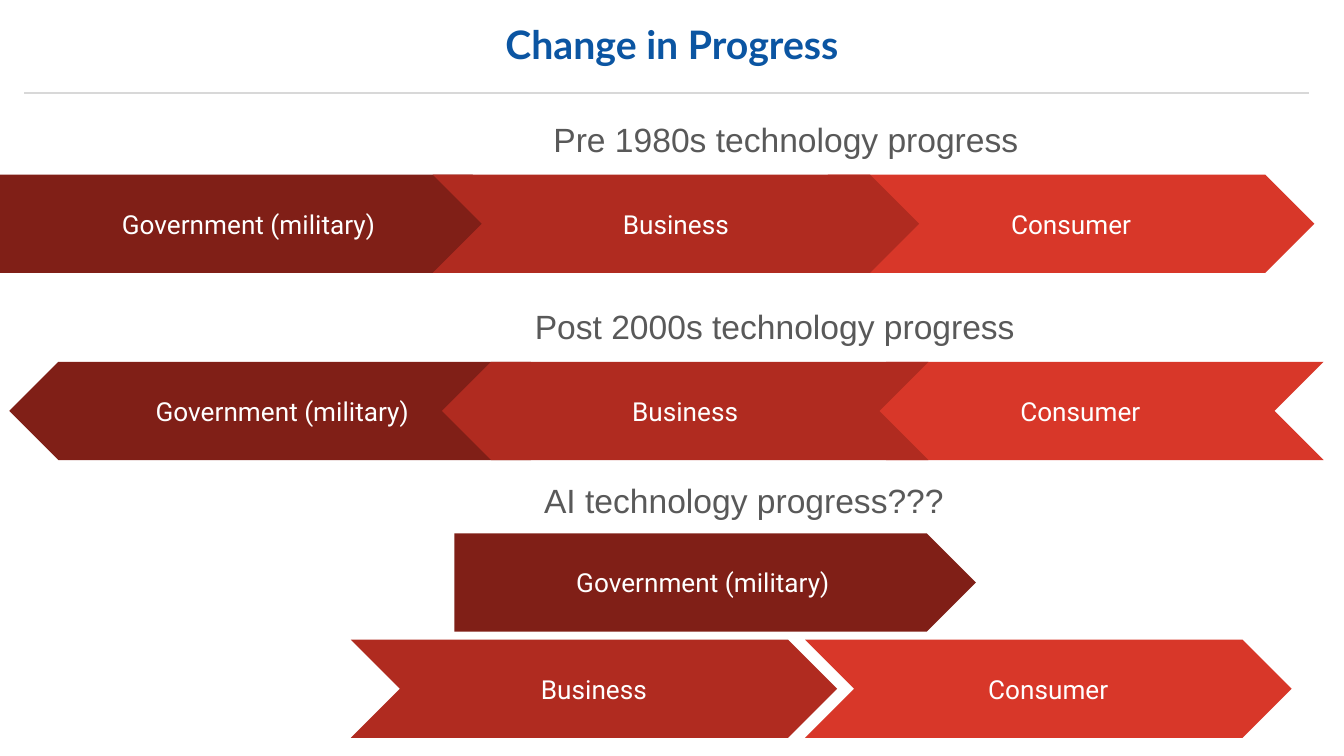
from dataclasses import dataclass

from lxml.etree import SubElement
from pptx import Presentation
from pptx.dml.color import RGBColor
from pptx.enum.shapes import MSO_CONNECTOR as Connector, MSO_SHAPE as Shape
from pptx.enum.text import MSO_ANCHOR as Anchor, PP_ALIGN as Align
from pptx.oxml.ns import qn
from pptx.util import Pt


@dataclass(frozen=True)
class Theme:
    title: str = "0B55A2"
    rule: str = "D8D8D8"
    heading: str = "595959"
    label: str = "FFFFFF"
    government: str = "801F17"
    business: str = "B02B20"
    consumer: str = "D83729"
    title_size: int = 21
    heading_size: int = 18
    label_size: int = 14


THEME = Theme()
ARROW_HEIGHT = 52.6
PLATE_WIDTH = 279.4
CHEVRON_WIDTH = 260.6
ARROWS = {
    "Consumer": (Shape.CHEVRON, CHEVRON_WIDTH, THEME.consumer),
    "Government (military)": (Shape.PENTAGON, PLATE_WIDTH, THEME.government),
    "Business": (Shape.CHEVRON, CHEVRON_WIDTH, THEME.business),
}


def color(value):
    return RGBColor.from_string(value)


def write(shape, text, *, font, size, fill, bold=False, align=Align.LEFT,
          anchor=Anchor.TOP, inset_x=7.2, inset_y=7.2):
    frame = shape.text_frame
    frame.word_wrap = True
    frame.vertical_anchor = anchor
    frame.margin_left = frame.margin_right = Pt(inset_x)
    frame.margin_top = frame.margin_bottom = Pt(inset_y)
    para = frame.paragraphs[0]
    para.alignment = align
    span = para.add_run()
    span.text = text
    span.font.name = font
    span.font.size = Pt(size)
    span.font.bold = bold
    span.font.color.rgb = color(fill)


def add_title(page, left, top, width):
    box = page.shapes.add_textbox(Pt(left), Pt(top), Pt(width), Pt(31))
    write(box, "Change in Progress", font="Lato", size=THEME.title_size,
          fill=THEME.title, bold=True, align=Align.CENTER,
          inset_x=5, inset_y=2.9)
    rule_top = Pt(top + 41.8)
    rule = page.shapes.add_connector(
        Connector.STRAIGHT, Pt(left + 13), rule_top,
        Pt(left + width - 18.7), rule_top)
    rule.line.color.rgb = color(THEME.rule)
    rule.line.width = Pt(1)
    SubElement(rule._element.spPr, qn("a:effectLst"))


def add_heading(page, text, left, top):
    box = page.shapes.add_textbox(Pt(left), Pt(top), Pt(336), Pt(31))
    write(box, text, font="Arial", size=THEME.heading_size, fill=THEME.heading)


def add_arrow(page, label, left, top, reverse):
    kind, width, fill = ARROWS[label]
    arrow = page.shapes.add_shape(
        kind, Pt(left), Pt(top), Pt(width), Pt(ARROW_HEIGHT))
    arrow.adjustments[0] = 0.5
    arrow.shadow.inherit = False
    arrow.fill.solid()
    arrow.fill.fore_color.rgb = color(fill)
    arrow.line.fill.background()
    if reverse:
        arrow._element.spPr.find(qn("a:xfrm")).set("flipH", "1")
    write(arrow, label, font="Roboto", size=THEME.label_size,
          fill=THEME.label, align=Align.CENTER, anchor=Anchor.MIDDLE)


def add_flow(page, left, top, heading, heading_left, offsets, reverse=False):
    add_heading(page, heading, left + heading_left, top)
    for label, (x, y) in zip(ARROWS, offsets):
        add_arrow(page, label, left + x, top + y, reverse)


def main():
    deck = Presentation()
    deck.slide_width, deck.slide_height = Pt(720), Pt(405)
    page = deck.slides.add_slide(deck.slide_layouts[6])

    add_title(page, 0, 7.9, 720)
    chain = [(443.5, 37.1), (0, 37.1), (231.8, 37.1)]
    split = [(243.4, 92.9), (55.5, 36), (0, 92.9)]
    add_flow(page, 0, 56.5, "Pre 1980s technology progress", 289.4, chain)
    add_flow(page, 5, 156.8, "Post 2000s technology progress", 274.4, chain,
             reverse=True)
    add_flow(page, 187.9, 249.8, "AI technology progress???", 96.5, split)

    deck.save("out.pptx")


if __name__ == "__main__":
    main()
